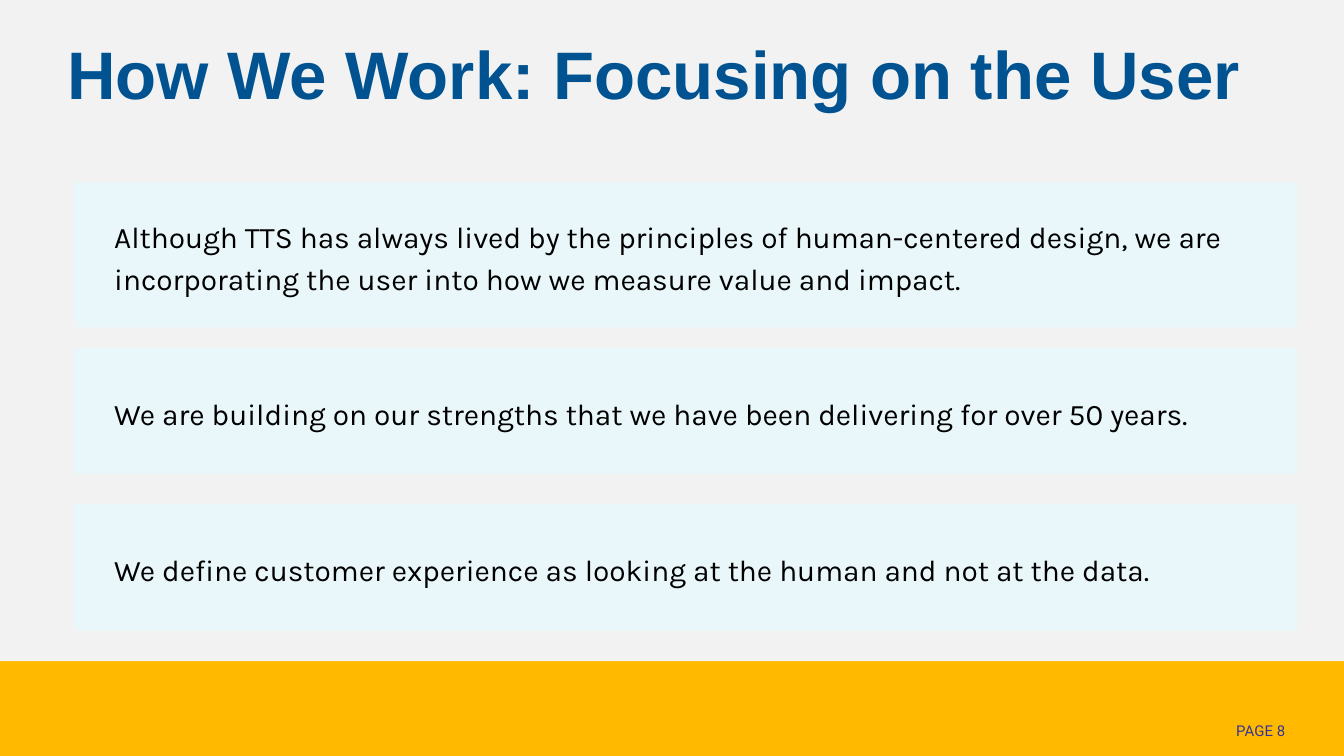
from lxml.etree import SubElement
from pptx import Presentation
from pptx.dml.color import RGBColor
from pptx.enum.shapes import MSO_SHAPE as Shape
from pptx.enum.text import MSO_ANCHOR as Anchor, PP_ALIGN as Align
from pptx.oxml.ns import qn
from pptx.util import Cm, Pt

YELLOW = RGBColor(0xFF, 0xBA, 0x00)
LIGHT_GRAY = RGBColor(0xF2, 0xF2, 0xF2)
PALE_BLUE = RGBColor(0xE5, 0xFA, 0xFF)
DARK_BLUE = RGBColor(0x00, 0x53, 0x90)
INDIGO = RGBColor(0x33, 0x33, 0x99)
BLACK = RGBColor(0x00, 0x00, 0x00)

SLIDE_WIDTH, SLIDE_HEIGHT = 25.4, 14.29
BAND_TOP = 12.5

TITLE = {"name": "Arial", "size": Pt(36), "bold": True}
PAGE = {"name": "Roboto", "size": Pt(8)}
BODY = {"name": "Karla", "size": Pt(16)}

# Top and height in cm, then the statement
STATEMENTS = [
    (3.45, 2.74, "Although TTS has always lived by the principles of human-centered "
                 "design, we are incorporating the user into how we measure value and impact."),
    (6.58, 2.39, "We are building on our strengths that we have been delivering "
                 "for over 50 years."),
    (9.53, 2.39, "We define customer experience as looking at the human and not at the data."),
]


def add_rectangle(slide, left, top, width, height, color, opacity=None):
    shape = slide.shapes.add_shape(
        Shape.RECTANGLE, Cm(left), Cm(top), Cm(width), Cm(height))
    shape.shadow.inherit = False
    shape.fill.solid()
    shape.fill.fore_color.rgb = color
    shape.line.fill.background()
    if opacity is not None:
        color_element = shape.fill._xPr.find(qn("a:solidFill"))[0]
        SubElement(color_element, qn("a:alpha"), val=str(opacity * 1000))
    return shape


def write_text(shape, text, font_format, color, insets,
               align=Align.LEFT, line_spacing=None):
    frame = shape.text_frame
    frame.word_wrap = True
    frame.vertical_anchor = Anchor.MIDDLE
    for side, inset in zip(("left", "top", "right", "bottom"), insets):
        setattr(frame, f"margin_{side}", Cm(inset))
    paragraph = frame.paragraphs[0]
    paragraph.alignment = align
    paragraph.line_spacing = line_spacing
    run = paragraph.add_run()
    run.text = text
    for attribute, value in font_format.items():
        setattr(run.font, attribute, value)
    run.font.color.rgb = color


def add_text(slide, left, top, width, height, *text_settings, **options):
    box = slide.shapes.add_textbox(Cm(left), Cm(top), Cm(width), Cm(height))
    write_text(box, *text_settings, **options)


def main():
    presentation = Presentation()
    presentation.slide_width = Cm(SLIDE_WIDTH)
    presentation.slide_height = Cm(SLIDE_HEIGHT)
    slide = presentation.slides.add_slide(presentation.slide_layouts[6])

    # Background and footer band
    add_rectangle(slide, 0, BAND_TOP, SLIDE_WIDTH, SLIDE_HEIGHT - BAND_TOP, YELLOW)
    add_rectangle(slide, 0, 0, SLIDE_WIDTH, BAND_TOP, LIGHT_GRAY)

    # Title and page number
    add_text(slide, 1.02, 0, 23.19, 2.74, "How We Work: Focusing on the User",
             TITLE, DARK_BLUE, (0.25, 0.13, 0.25, 0.13))
    add_text(slide, 22.43, 13.36, 2.11, 0.91, "PAGE 8",
             PAGE, INDIGO, (0.25,) * 4, align=Align.RIGHT)

    # Statement panels
    for top, height, statement in STATEMENTS:
        panel = add_rectangle(slide, 1.4, top, 23.11, height, PALE_BLUE, opacity=64)
        write_text(panel, statement, BODY, BLACK, (0.76, 0.25, 0.25, 0.25),
                   line_spacing=1.15)

    presentation.save("out.pptx")


if __name__ == "__main__":
    main()
